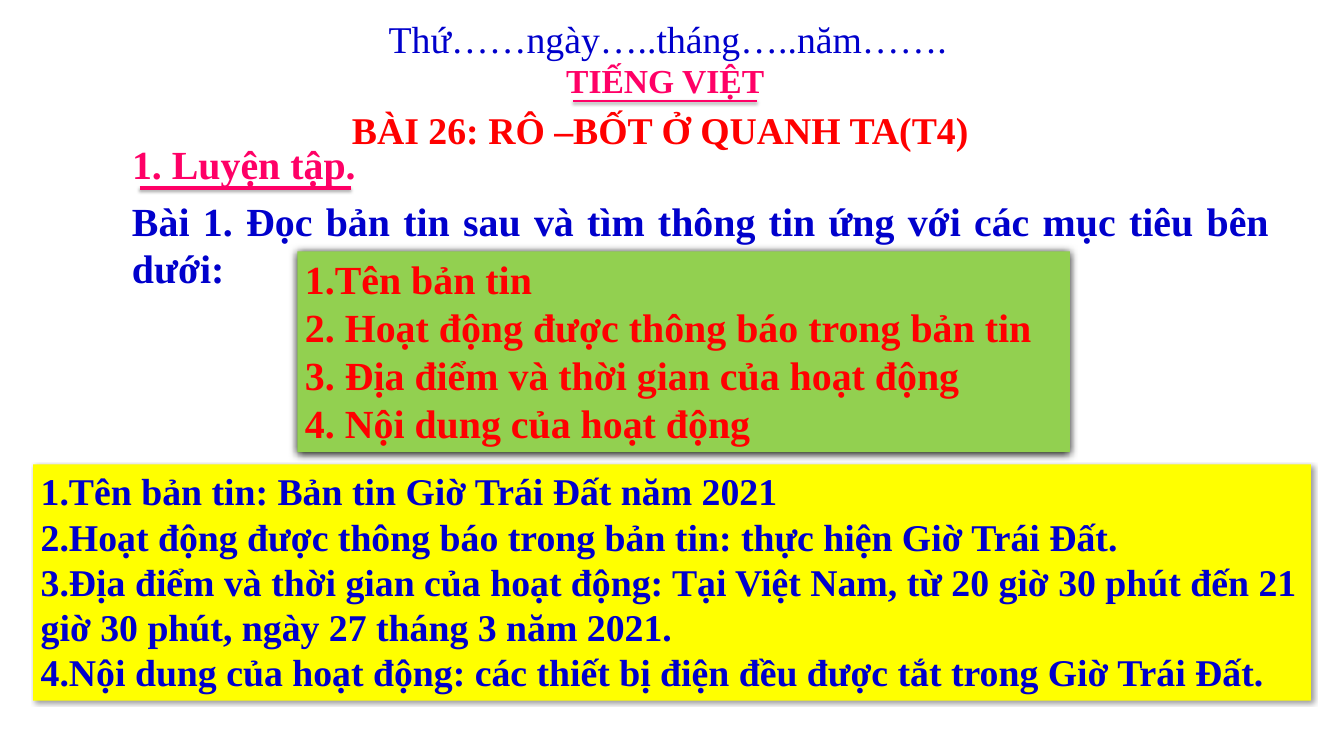
import pptx
import pptx.dml.color
import pptx.enum.shapes
import pptx.enum.text
import pptx.oxml.ns
import pptx.util
from lxml import etree

Inches = pptx.util.Inches
Pt = pptx.util.Pt
Align = pptx.enum.text.PP_ALIGN

BLUE = "0000CC"
PINK = "FF0066"
RED = "FF0000"
GREEN = "92D050"
YELLOW = "FFFF00"


def colour(value):
    return pptx.dml.color.RGBColor.from_string(value)


class LessonSlide:
    font_name = "Times New Roman"

    def __init__(self, slide):
        self.slide = slide

    def fill_text(self, shape, lines, size, text_colour, bold, align, wrap):
        frame = shape.text_frame
        frame.word_wrap = wrap
        frame.auto_size = pptx.enum.text.MSO_AUTO_SIZE.SHAPE_TO_FIT_TEXT
        frame.vertical_anchor = pptx.enum.text.MSO_ANCHOR.TOP
        frame.text = "\n".join(lines)
        for paragraph in frame.paragraphs:
            paragraph.alignment = align
            paragraph.font.name = self.font_name
            paragraph.font.size = Pt(size)
            paragraph.font.bold = bold
            paragraph.font.color.rgb = colour(text_colour)

    def cast_shadow(self, shape, opacity, blur, distance, angle):
        qn = pptx.oxml.ns.qn
        effects = etree.SubElement(shape._element.spPr, qn("a:effectLst"))
        shadow = etree.SubElement(
            effects, qn("a:outerShdw"), blurRad=str(Pt(blur)),
            dist=str(Pt(distance)), dir=str(angle * 60000), rotWithShape="0")
        black = etree.SubElement(shadow, qn("a:srgbClr"), val="000000")
        etree.SubElement(black, qn("a:alpha"), val=str(opacity * 1000))

    def text(self, box, line, size, text_colour, bold=True, align=Align.LEFT, wrap=False):
        shape = self.slide.shapes.add_textbox(*map(Inches, box))
        self.fill_text(shape, [line], size, text_colour, bold, align, wrap)

    def underline(self, left, right, y, width, opacity, distance):
        connector = self.slide.shapes.add_connector(
            pptx.enum.shapes.MSO_CONNECTOR.STRAIGHT,
            Inches(left), Inches(y), Inches(right), Inches(y))
        connector.line.color.rgb = colour(PINK)
        connector.line.width = Pt(width)
        self.cast_shadow(connector, opacity, 3.1, distance, 90)

    def panel(self, box, fill, lines, size, text_colour, shadow):
        shape = self.slide.shapes.add_shape(
            pptx.enum.shapes.MSO_SHAPE.RECTANGLE, *map(Inches, box))
        shape.fill.solid()
        shape.fill.fore_color.rgb = colour(fill)
        shape.line.fill.background()
        self.cast_shadow(shape, *shadow)
        self.fill_text(shape, lines, size, text_colour, True, Align.LEFT, True)


def main():
    presentation = pptx.Presentation()
    presentation.slide_width = Inches(17.8)
    presentation.slide_height = Inches(10)
    lesson = LessonSlide(presentation.slides.add_slide(presentation.slide_layouts[6]))

    lesson.text((5.05, 0.16, 7.67, 0.71), "Thứ……ngày…..tháng…..năm…….", 36, BLUE, bold=False)
    lesson.text((7.4, 0.75, 2.85, 0.64), "TIẾNG VIỆT", 32, PINK)
    lesson.underline(7.59, 10.03, 1.34, 2, 38, 1.6)
    lesson.text((1.65, 1.8, 4.58, 0.74), "1. Luyện tập.", 38, PINK, wrap=True)
    lesson.underline(1.85, 4.65, 2.49, 3, 35, 1.8)
    lesson.text(
        (1.65, 2.55, 15.27, 1.38),
        "Bài 1. Đọc bản tin sau và tìm thông tin ứng với các mục tiêu bên dưới:",
        38, BLUE, align=Align.JUSTIFY, wrap=True)
    lesson.text((4.52, 1.37, 8.45, 0.71), "BÀI 26: RÔ –BỐT Ở QUANH TA(T4)", 36, RED,
                align=Align.CENTER)

    lesson.panel((3.94, 3.33, 10.23, 2.66), GREEN, [
        "1.Tên bản tin",
        "2. Hoạt động được thông báo trong bản tin",
        "3. Địa điểm và thời gian của hoạt động",
        "4. Nội dung của hoạt động",
    ], 38, RED, (100, 8.5, 1, 90))
    lesson.panel((0.44, 6.15, 16.92, 3.13), YELLOW, [
        "1.Tên bản tin: Bản tin Giờ Trái Đất năm 2021",
        "2.Hoạt động được thông báo trong bản tin: thực hiện Giờ Trái Đất.",
        "3.Địa điểm và thời gian của hoạt động: Tại Việt Nam, từ 20 giờ 30 phút đến 21 "
        "giờ 30 phút, ngày 27 tháng 3 năm 2021.",
        "4.Nội dung của hoạt động: các thiết bị điện đều được tắt trong Giờ Trái Đất.",
    ], 36, BLUE, (40, 4, 3, 45))

    presentation.save("out.pptx")


if __name__ == "__main__":
    main()
